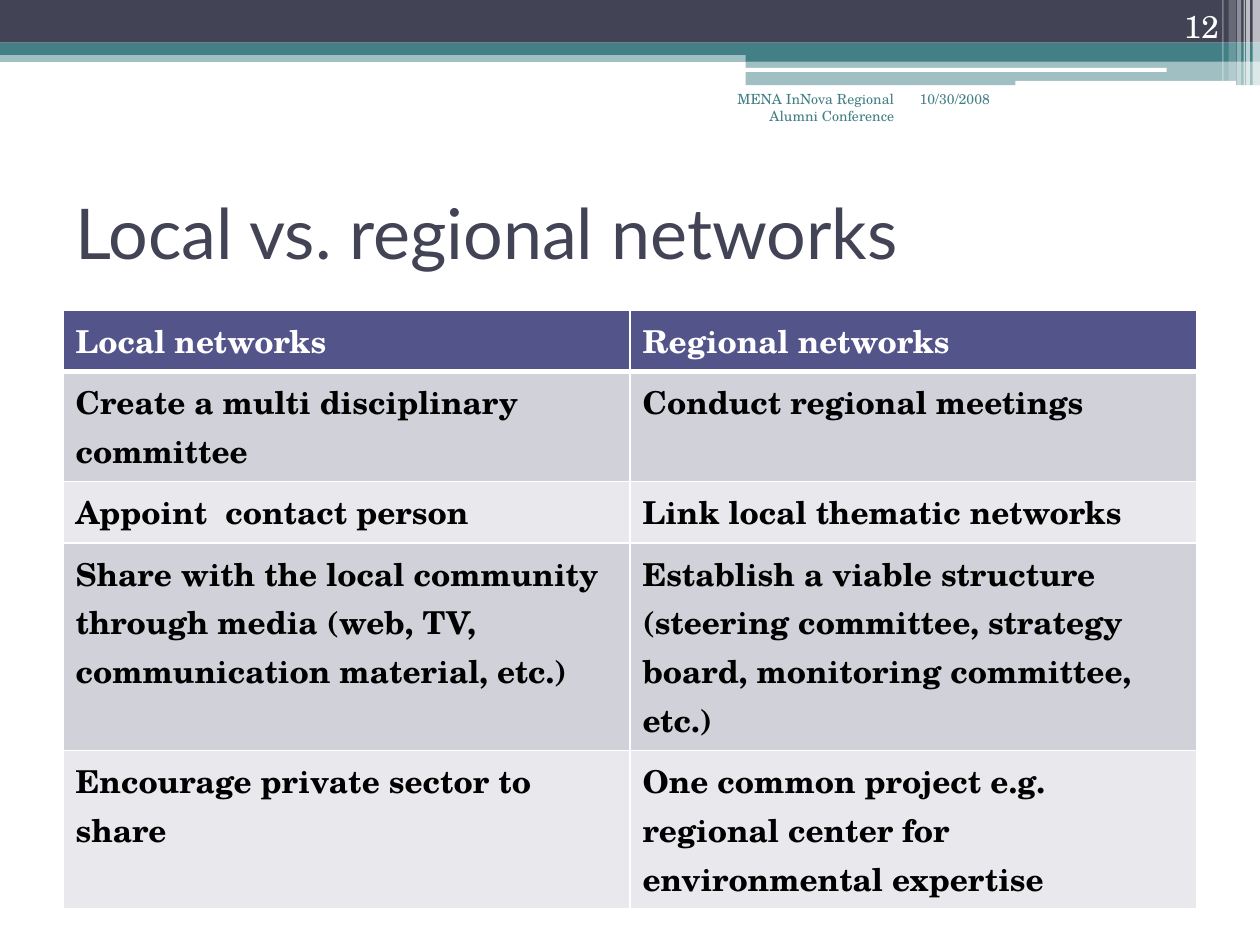
from dataclasses import dataclass

from lxml.etree import SubElement
from pptx import Presentation
from pptx.dml.color import RGBColor
from pptx.enum.shapes import MSO_SHAPE as Preset
from pptx.enum.text import MSO_ANCHOR as Anchor, PP_ALIGN as Align
from pptx.oxml.ns import qn
from pptx.util import Cm, Pt


@dataclass(frozen=True)
class Theme:
    heading_font: str = "Lato"
    body_font: str = "TeX Gyre Schola"
    title_size: int = 40
    body_size: int = 18
    small_size: int = 8
    dark: str = "424456"
    teal: str = "438086"
    white: str = "FFFFFF"
    black: str = "000000"
    header_fill: str = "53548A"
    row_fills: tuple = ("D1D1DA", "E9E9ED")


class SlideBuilder:
    def __init__(self, slide, theme):
        self.slide = slide
        self.theme = theme

    def format_text(self, text_frame, size, color, font, bold=False, align=Align.LEFT):
        for paragraph in text_frame.paragraphs:
            paragraph.alignment = align
            for run in paragraph.runs:
                run.font.name = font
                run.font.size = Pt(size)
                run.font.bold = bold
                run.font.color.rgb = RGBColor.from_string(color)

    def bar(self, left, top, width, height, color, opacity=100, preset=Preset.RECTANGLE):
        shape = self.slide.shapes.add_shape(preset, Cm(left), Cm(top), Cm(width), Cm(height))
        shape.shadow.inherit = False
        shape.line.fill.background()
        shape.fill.solid()
        shape.fill.fore_color.rgb = RGBColor.from_string(color)
        if opacity < 100:
            color_element = shape.fill._xPr.find(".//" + qn("a:srgbClr"))
            SubElement(color_element, qn("a:alpha"), val=str(opacity * 1000))

    def title(self, text, left, top, width, height):
        shape = self.slide.shapes.title
        shape.left, shape.top, shape.width, shape.height = Cm(left), Cm(top), Cm(width), Cm(height)
        shape.text_frame.text = text
        shape.text_frame.vertical_anchor = Anchor.MIDDLE
        theme = self.theme
        self.format_text(shape.text_frame, theme.title_size, theme.dark, theme.heading_font)

    def text(self, text, left, top, width, height, size, color, align=Align.LEFT, anchor=Anchor.TOP):
        shape = self.slide.shapes.add_textbox(Cm(left), Cm(top), Cm(width), Cm(height))
        shape.text_frame.word_wrap = True
        shape.text_frame.vertical_anchor = anchor
        shape.text_frame.text = text
        self.format_text(shape.text_frame, size, color, self.theme.body_font, align=align)

    def cell_borders(self, cell, widths):
        properties = cell._tc.get_or_add_tcPr()
        for side, width in widths.items():
            line = SubElement(properties, qn(f"a:ln{side}"), w=str(Pt(width)))
            fill = SubElement(line, qn("a:solidFill"))
            SubElement(fill, qn("a:srgbClr"), val=self.theme.white)

    def table(self, rows, line_counts, left, top, width):
        theme = self.theme
        heights = [Cm(0.98 * count + 0.25) for count in line_counts]
        frame = self.slide.shapes.add_table(
            len(rows), len(rows[0]), Cm(left), Cm(top), Cm(width), sum(heights)
        )
        table = frame.table
        for row_index, values in enumerate(rows):
            table.rows[row_index].height = heights[row_index]
            is_header = row_index == 0
            fill = theme.header_fill if is_header else theme.row_fills[(row_index - 1) % 2]
            color = theme.white if is_header else theme.black
            top_width = 3 if row_index == 1 else 1
            bottom_width = 3 if is_header else 1
            for column_index, value in enumerate(values):
                cell = table.cell(row_index, column_index)
                cell.text_frame.text = value
                self.format_text(cell.text_frame, theme.body_size, color, theme.body_font, bold=True)
                self.cell_borders(cell, {"L": 1, "R": 1, "T": top_width, "B": bottom_width})
                cell.fill.solid()
                cell.fill.fore_color.rgb = RGBColor.from_string(fill)


NETWORK_ROWS = [
    ("Local networks", "Regional networks"),
    ("Create a multi disciplinary committee", "Conduct regional meetings"),
    ("Appoint  contact person", "Link local thematic networks"),
    (
        "Share with the local community through media (web, TV, communication material, etc.)",
        "Establish a viable structure (steering committee, strategy board, monitoring committee, etc.)",
    ),
    (
        "Encourage private sector to share",
        "One common project e.g. regional center for environmental expertise",
    ),
]
LINE_COUNTS = (1, 2, 1, 4, 3)

EDGE_STRIPES = [
    (25.25, 0.15, 1.73, 65),
    (25.12, 0.08, 1.73, 65),
    (25.07, 0.03, 1.73, 60),
    (24.94, 0.08, 1.73, 40),
    (24.77, 0.15, 1.63, 20),
    (24.64, 0.03, 1.63, 30),
]


def main():
    theme = Theme()
    presentation = Presentation()
    presentation.slide_width = Cm(25.4)
    presentation.slide_height = Cm(19.05)
    slide = presentation.slides.add_slide(presentation.slide_layouts[5])
    builder = SlideBuilder(slide, theme)

    builder.bar(0, 1.02, 25.4, 0.23, theme.teal, 50)
    builder.bar(0, 0, 25.4, 0.86, theme.dark)
    builder.bar(0, 0.86, 25.4, 0.25, theme.teal)
    builder.bar(15.03, 0.99, 10.37, 0.25, theme.teal)
    builder.bar(15.03, 1.22, 10.37, 0.5, theme.teal, 50)
    builder.bar(15.01, 1.37, 8.51, 0.08, theme.white, preset=Preset.ROUNDED_RECTANGLE)
    builder.bar(20.47, 1.63, 4.45, 0.1, theme.white, preset=Preset.ROUNDED_RECTANGLE)
    for left, width, height, opacity in EDGE_STRIPES:
        builder.bar(left, 0, width, height, theme.white, opacity)

    builder.title("Local vs. regional networks", 1.27, 3.18, 22.86, 2.97)
    builder.table(NETWORK_ROWS, LINE_COUNTS, 1.27, 6.25, 22.86)
    builder.text("10/30/2008", 18.29, 1.7, 2.67, 1.27, theme.small_size, theme.teal)
    builder.text(
        "MENA InNova Regional Alumni Conference",
        14.6, 1.7, 3.68, 1.27, theme.small_size, theme.teal, Align.RIGHT,
    )
    builder.text("12", 22.7, 0, 2.12, 1.02, theme.body_size, theme.white, Align.RIGHT, Anchor.BOTTOM)

    presentation.save("out.pptx")


if __name__ == "__main__":
    main()
